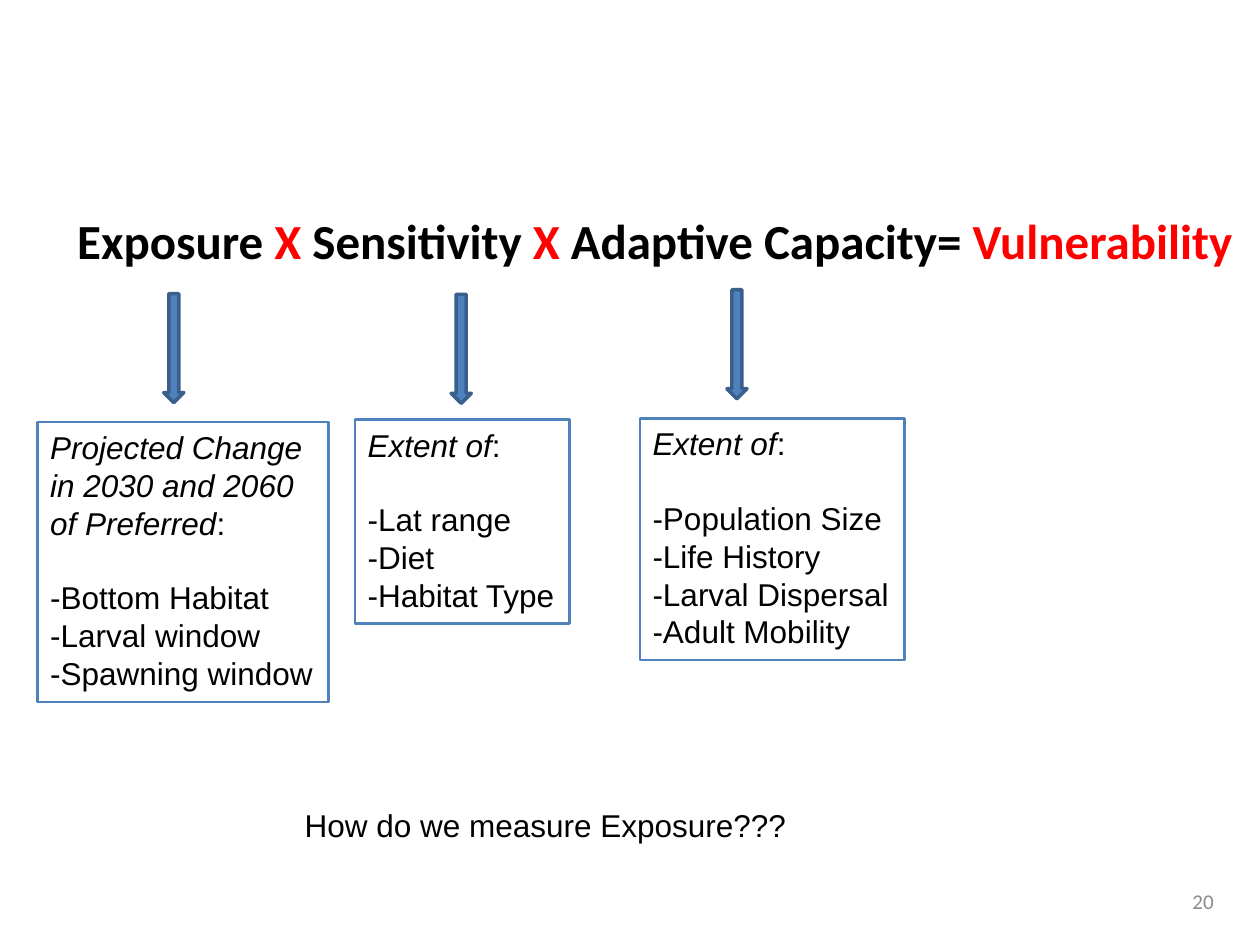
"""Build the vulnerability equation slide with its three factor cards."""
from dataclasses import dataclass

from pptx import Presentation
from pptx.dml.color import RGBColor
from pptx.enum.shapes import MSO_SHAPE
from pptx.enum.text import MSO_ANCHOR, PP_ALIGN
from pptx.util import Pt


@dataclass(frozen=True)
class Theme:
    ink: str = "000000"
    accent: str = "FF0000"
    muted: str = "8C8C8C"
    blue: str = "4F81BD"
    dark_blue: str = "3A5F8C"
    heading_font: str = "Calibri"
    body_font: str = "Arial"
    equation_size: float = 28
    body_size: float = 18
    number_size: float = 12
    list_gap: float = 21


@dataclass(frozen=True)
class Run:
    text: str
    color: str = "000000"
    italic: bool = False


@dataclass(frozen=True)
class Paragraph:
    runs: tuple[Run, ...]
    space_before: float = 0


@dataclass(frozen=True)
class Box:
    left: float
    top: float
    width: float
    height: float

    def lengths(self) -> tuple[Pt, ...]:
        return tuple(Pt(v) for v in (self.left, self.top, self.width, self.height))


@dataclass(frozen=True)
class Factor:
    arrow: Box
    card: Box
    heading: tuple[str, ...]
    items: tuple[str, ...]


THEME = Theme()

EQUATION = (
    Run("Exposure"),
    Run(" X ", THEME.accent),
    Run("Sensitivity"),
    Run(" X ", THEME.accent),
    Run("Adaptive Capacity= "),
    Run("Vulnerability ", THEME.accent),
)

FACTORS = (
    Factor(
        Box(93.6, 167.8, 11.5, 62.3),
        Box(21.6, 241.2, 166.3, 160),
        ("Projected Change", "in 2030 and 2060", "of Preferred"),
        ("-Bottom Habitat", "-Larval window", "-Spawning window"),
    ),
    Factor(
        Box(257.8, 168.2, 11.5, 62.3),
        Box(203, 239.8, 122.4, 116.6),
        ("Extent of",),
        ("-Lat range", "-Diet", "-Habitat Type"),
    ),
    Factor(
        Box(415.4, 165.6, 11.5, 62.3),
        Box(365.8, 239, 151.2, 138.2),
        ("Extent of",),
        ("-Population Size", "-Life History", "-Larval Dispersal", "-Adult Mobility"),
    ),
)


def add_text(slide, box: Box, paragraphs: list[Paragraph], *, font: str = THEME.body_font,
             size: float = THEME.body_size, bold: bool = False, align=PP_ALIGN.LEFT,
             anchor=MSO_ANCHOR.TOP, wrap: bool = True, outline: str | None = None) -> None:
    holder = slide.shapes.add_textbox(*box.lengths())
    if outline:
        holder.line.color.rgb = RGBColor.from_string(outline)
        holder.line.width = Pt(1.5)
    frame = holder.text_frame
    frame.word_wrap = wrap
    frame.vertical_anchor = anchor
    for index, paragraph in enumerate(paragraphs):
        line = frame.add_paragraph() if index else frame.paragraphs[0]
        line.alignment = align
        if paragraph.space_before:
            line.space_before = Pt(paragraph.space_before)
        for run in paragraph.runs:
            piece = line.add_run()
            piece.text = run.text
            piece.font.name = font
            piece.font.size = Pt(size)
            piece.font.bold = bold
            piece.font.italic = run.italic
            piece.font.color.rgb = RGBColor.from_string(run.color)


def add_arrow(slide, box: Box) -> None:
    arrow = slide.shapes.add_shape(MSO_SHAPE.DOWN_ARROW, *box.lengths())
    arrow.shadow.inherit = False
    arrow.fill.solid()
    arrow.fill.fore_color.rgb = RGBColor.from_string(THEME.blue)
    arrow.line.color.rgb = RGBColor.from_string(THEME.dark_blue)
    arrow.line.width = Pt(2)


def add_card(slide, factor: Factor) -> None:
    *opening, closing = factor.heading
    paragraphs = [Paragraph((Run(text, italic=True),)) for text in opening]
    paragraphs.append(Paragraph((Run(closing, italic=True), Run(":"))))
    paragraphs += [
        Paragraph((Run(item),), 0 if index else THEME.list_gap)
        for index, item in enumerate(factor.items)
    ]
    add_text(slide, factor.card, paragraphs, wrap=False, outline=THEME.blue)


def main() -> None:
    deck = Presentation()
    deck.slide_width, deck.slide_height = Pt(720), Pt(540)
    slide = deck.slides.add_slide(deck.slide_layouts[6])
    add_text(slide, Box(532.8, 500.4, 167.8, 28.8), [Paragraph((Run("20", THEME.muted),))],
             font=THEME.heading_font, size=THEME.number_size, align=PP_ALIGN.RIGHT,
             anchor=MSO_ANCHOR.MIDDLE)
    add_text(slide, Box(35.3, 116.6, 684, 61.9), [Paragraph(EQUATION)],
             font=THEME.heading_font, size=THEME.equation_size, bold=True,
             align=PP_ALIGN.CENTER)
    for factor in FACTORS:
        add_arrow(slide, factor.arrow)
    for factor in FACTORS:
        add_card(slide, factor)
    add_text(slide, Box(167, 457.2, 297.4, 28.8),
             [Paragraph((Run("How do we measure Exposure???"),))], wrap=False)
    deck.save("out.pptx")


if __name__ == "__main__":
    main()
